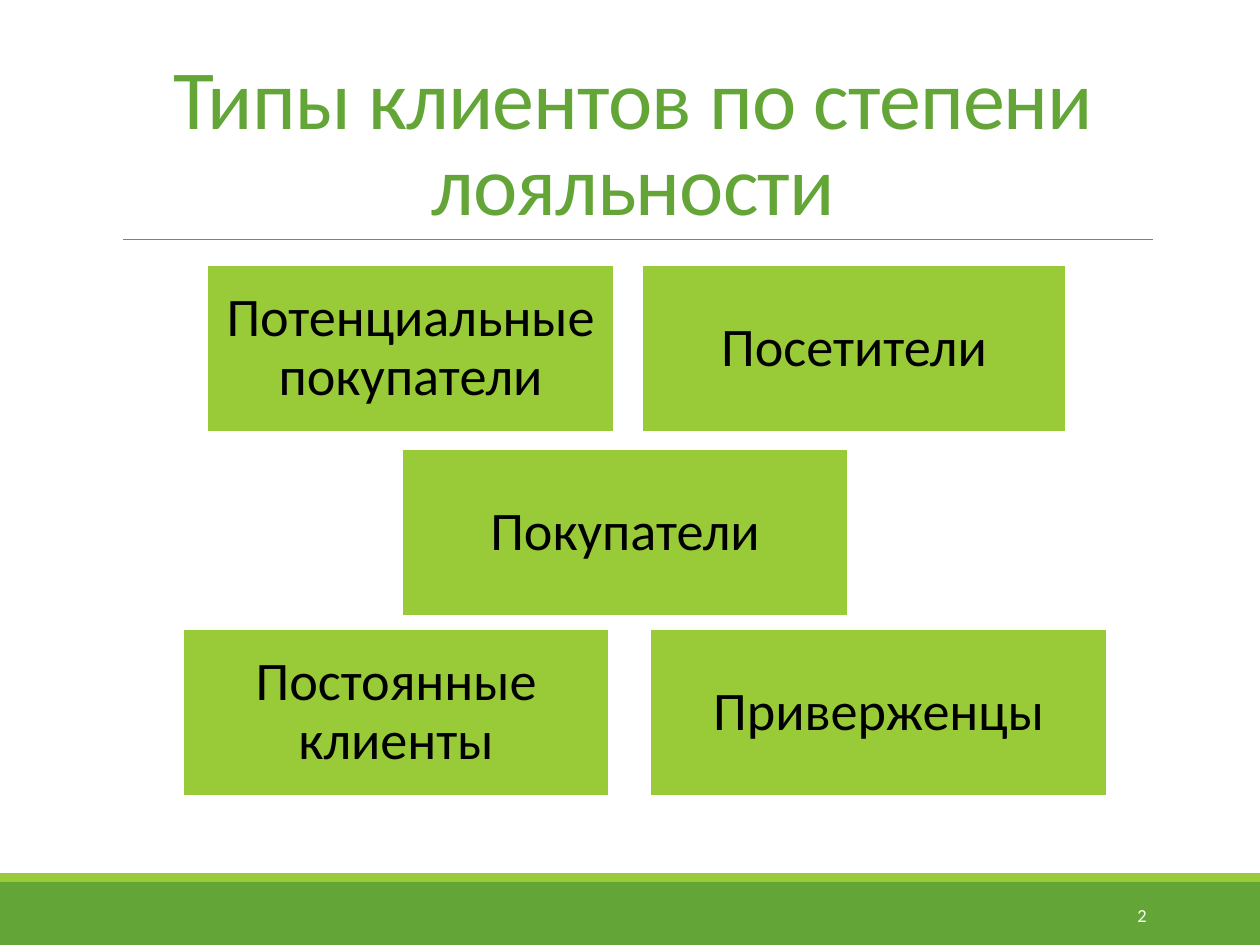
import pptx
import pptx.util
import pptx.dml.color
import pptx.enum.shapes
import pptx.enum.text
import pptx.oxml.ns
from dataclasses import dataclass
from lxml import etree

ALIGN = pptx.enum.text.PP_ALIGN
ANCHOR = pptx.enum.text.MSO_ANCHOR


@dataclass
class Theme:
    font: str = "Calibri"
    green: str = "63A537"
    lime: str = "99CB38"
    gray: str = "808080"
    white: str = "FFFFFF"
    black: str = "000000"
    head: float = 48
    body: float = 31
    small: float = 10.5


def px(n):
    return pptx.util.Emu(round(n * 914400 / 126))


def rgb(code):
    return pptx.dml.color.RGBColor.from_string(code)


class Deck:
    def __init__(self, theme):
        self.theme = theme
        self.file = pptx.Presentation()
        self.file.slide_width = px(1260)
        self.file.slide_height = px(945)
        self.slide = self.file.slides.add_slide(self.file.slide_layouts[5])

    def put_text(self, frame, text, size, color, align, anchor, space=1.0):
        frame.text = text
        frame.word_wrap = True
        frame.auto_size = pptx.enum.text.MSO_AUTO_SIZE.NONE
        frame.vertical_anchor = anchor
        para = frame.paragraphs[0]
        para.alignment = align
        para.line_spacing = space
        font = para.runs[0].font
        font.name = self.theme.font
        font.size = pptx.util.Pt(size)
        font.color.rgb = rgb(color)
        return para.runs[0]

    def title(self, text, x, y, w, h):
        shape = self.slide.shapes.title
        shape.left, shape.top, shape.width, shape.height = map(px, (x, y, w, h))
        run = self.put_text(shape.text_frame, text, self.theme.head,
                            self.theme.green, ALIGN.CENTER, ANCHOR.BOTTOM, 0.85)
        run.font._element.set("spc", "-50")

    def rect(self, x, y, w, h, fill):
        shape = self.slide.shapes.add_shape(
            pptx.enum.shapes.MSO_SHAPE.RECTANGLE, *map(px, (x, y, w, h)))
        shape.shadow.inherit = False
        shape.fill.solid()
        shape.fill.fore_color.rgb = rgb(fill)
        shape.line.fill.background()
        return shape

    def card(self, text, x, y, w, h):
        shape = self.rect(x, y, w, h, self.theme.lime)
        shape.line.color.rgb = rgb(self.theme.white)
        shape.line.width = pptx.util.Pt(1.25)
        frame = shape.text_frame
        frame.margin_left = frame.margin_right = px(16)
        frame.margin_top = frame.margin_bottom = px(16)
        self.put_text(frame, text, self.theme.body, self.theme.black,
                      ALIGN.CENTER, ANCHOR.MIDDLE, 0.9)

    def rule(self, x, y, end):
        line = self.slide.shapes.add_connector(
            pptx.enum.shapes.MSO_CONNECTOR.STRAIGHT, px(x), px(y), px(end), px(y))
        line.line.color.rgb = rgb(self.theme.gray)
        line.line.width = pptx.util.Pt(0.5)
        etree.SubElement(line._element.spPr, pptx.oxml.ns.qn("a:effectLst"))

    def label(self, text, x, y, w, h):
        box = self.slide.shapes.add_textbox(*map(px, (x, y, w, h)))
        self.put_text(box.text_frame, text, self.theme.small, self.theme.white,
                      ALIGN.RIGHT, ANCHOR.MIDDLE)


def main():
    theme = Theme()
    deck = Deck(theme)

    # Footer bands and page number
    deck.rect(0, 882, 1260, 63, theme.green)
    deck.rect(0, 873, 1260, 9, theme.lime)
    deck.label("2", 1023, 890, 136, 50)

    # Title and rule
    deck.title("Типы клиентов по степени лояльности", 113, 39, 1040, 200)
    deck.rule(123, 239, 1153)

    # Client types, row by row: top, then (text, left, width)
    rows = [
        (265, [("Потенциальные покупатели", 207, 407), ("Посетители", 642, 424)]),
        (449, [("Покупатели", 402, 446)]),
        (629, [("Постоянные клиенты", 183, 426), ("Приверженцы", 650, 457)]),
    ]
    for top, cards in rows:
        for text, left, width in cards:
            deck.card(text, left, top, width, 167)

    deck.file.save("out.pptx")


if __name__ == "__main__":
    main()
